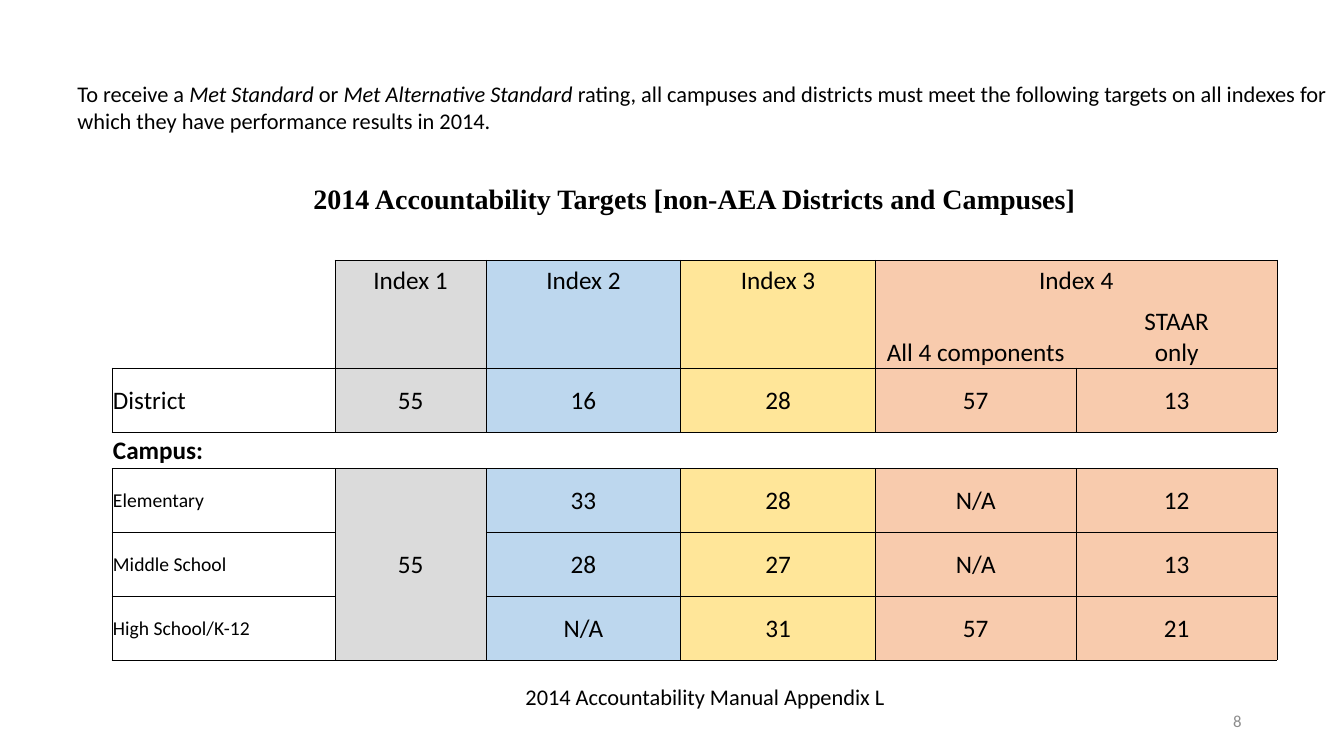
from pptx import Presentation
from pptx.dml.color import RGBColor
from pptx.enum.text import MSO_ANCHOR, PP_ALIGN
from pptx.oxml import parse_xml
from pptx.oxml.ns import nsdecls
from pptx.util import Pt

GREY, BLUE, YELLOW, ORANGE = "DBDBDB", "BDD7EE", "FFE699", "F8CBAD"
COLUMN_FILLS = [None, GREY, BLUE, YELLOW, ORANGE, ORANGE]
COLUMN_WIDTHS = [159.3, 108, 139, 139, 143.5, 143.5]
EMPTY = [""] * 6
NO_EDGES = [""] * 6
ALL_EDGES = ["LRTB"] * 6

TARGET_ROWS = [
    (34.5, ["2014 Accountability Targets [non-AEA Districts and Campuses]"] + [""] * 5, NO_EDGES),
    (31.7, EMPTY, [""] + ["B"] * 5),
    (26, ["", "Index 1", "Index 2", "Index 3", "Index 4", ""], ["R"] + ["LRT"] * 4 + ["RT"]),
    (51, ["", "", "", "", "All 4 components", "STAAR\nonly"],
     ["RB"] + ["LRB"] * 3 + ["LB", "RB"]),
    (45.7, ["District", "55", "16", "28", "57", "13"], ALL_EDGES),
    (26.3, ["Campus:"] + [""] * 5, ["TB"] * 6),
    (45.5, ["Elementary", "55", "33", "28", "N/A", "12"], ALL_EDGES),
    (45.5, ["Middle School", "", "28", "27", "N/A", "13"], ["LRTB", "LR"] + ["LRTB"] * 4),
    (45.5, ["High School/K-12", "", "N/A", "31", "57", "21"], ["LRTB", "LRB"] + ["LRTB"] * 4),
    (26, EMPTY, ["T"] * 6),
]
TITLE_ROW, HEADER_ROW, COMPONENT_ROW, CAMPUS_ROW = 0, 2, 3, 5
SCHOOL_ROWS = range(6, 9)
FILLED_ROWS = {HEADER_ROW, COMPONENT_ROW, 4, *SCHOOL_ROWS}
MERGES = [((0, 0), (0, 5)), ((2, 4), (2, 5)), ((6, 1), (8, 1)), ((9, 2), (9, 4))]


def color(value):
    return RGBColor.from_string(value)


def format_font(font, size, name="Calibri", bold=False, value="000000"):
    font.size = Pt(size)
    font.name = name
    font.bold = bold
    font.color.rgb = color(value)


def add_text(slide, box, parts, size=16, align=PP_ALIGN.LEFT,
             anchor=MSO_ANCHOR.TOP, value="000000"):
    shape = slide.shapes.add_textbox(*map(Pt, box))
    frame = shape.text_frame
    frame.word_wrap = True
    frame.vertical_anchor = anchor
    paragraph = frame.paragraphs[0]
    paragraph.alignment = align
    format_font(paragraph.font, size, value=value)
    for text, italic in parts:
        run = paragraph.add_run()
        run.text = text
        if italic:
            run.font.italic = True


def set_borders(cell, edges):
    properties = cell._tc.get_or_add_tcPr()
    for side in "LRTB":
        paint = '<a:solidFill><a:srgbClr val="000000"/></a:solidFill>' if side in edges else "<a:noFill/>"
        properties.append(parse_xml(f'<a:ln{side} {nsdecls("a")} w="6350">{paint}</a:ln{side}>'))


def format_cell(cell, row, column, text, edges):
    cell.margin_left = cell.margin_right = cell.margin_top = Pt(0.72)
    cell.margin_bottom = Pt(0)
    cell.vertical_anchor = MSO_ANCHOR.BOTTOM if row <= COMPONENT_ROW else MSO_ANCHOR.MIDDLE
    set_borders(cell, edges)
    fill = COLUMN_FILLS[column] if row in FILLED_ROWS else None
    if fill:
        cell.fill.solid()
        cell.fill.fore_color.rgb = color(fill)
    else:
        cell.fill.background()
    cell.text = text
    is_title = row == TITLE_ROW
    size = 20 if is_title else 14 if row in SCHOOL_ROWS and column == 0 else 18
    for paragraph in cell.text_frame.paragraphs:
        paragraph.alignment = PP_ALIGN.CENTER if column or is_title else PP_ALIGN.LEFT
        format_font(paragraph.font, size, "Times New Roman" if is_title else "Calibri",
                    row in (TITLE_ROW, CAMPUS_ROW))


def add_targets_table(slide, left, top):
    heights = [height for height, _, _ in TARGET_ROWS]
    frame = slide.shapes.add_table(len(heights), len(COLUMN_WIDTHS), Pt(left), Pt(top),
                                   Pt(sum(COLUMN_WIDTHS)), Pt(sum(heights)))
    table = frame.table
    table.first_row = table.horz_banding = False
    for column, width in zip(table.columns, COLUMN_WIDTHS):
        column.width = Pt(width)
    for row, (height, texts, edges) in enumerate(TARGET_ROWS):
        table.rows[row].height = Pt(height)
        for column, text in enumerate(texts):
            format_cell(table.cell(row, column), row, column, text, edges[column])
    for first, last in MERGES:
        table.cell(*first).merge(table.cell(*last))


def add_targets_slide(presentation):
    slide = presentation.slides.add_slide(presentation.slide_layouts[6])
    add_text(slide, (678, 500.5, 216, 28.75), [("8", False)], 12, PP_ALIGN.RIGHT,
             MSO_ANCHOR.MIDDLE, "8C8C8C")
    add_text(slide, (48.25, 54, 910, 46), [
        ("To receive a ", False),
        ("Met Standard ", True),
        ("or ", False),
        ("Met Alternative Standard ", True),
        ("rating, all campuses and districts must meet the following targets on all indexes "
         "for which they have performance results in 2014.", False),
    ])
    add_text(slide, (152.6, 484.6, 702, 26.6),
             [("2014 Accountability Manual Appendix L", False)], align=PP_ALIGN.CENTER)
    add_targets_table(slide, 80, 119.7)


def main():
    presentation = Presentation()
    presentation.slide_width = Pt(960)
    presentation.slide_height = Pt(540)
    add_targets_slide(presentation)
    presentation.save("out.pptx")


if __name__ == "__main__":
    main()
